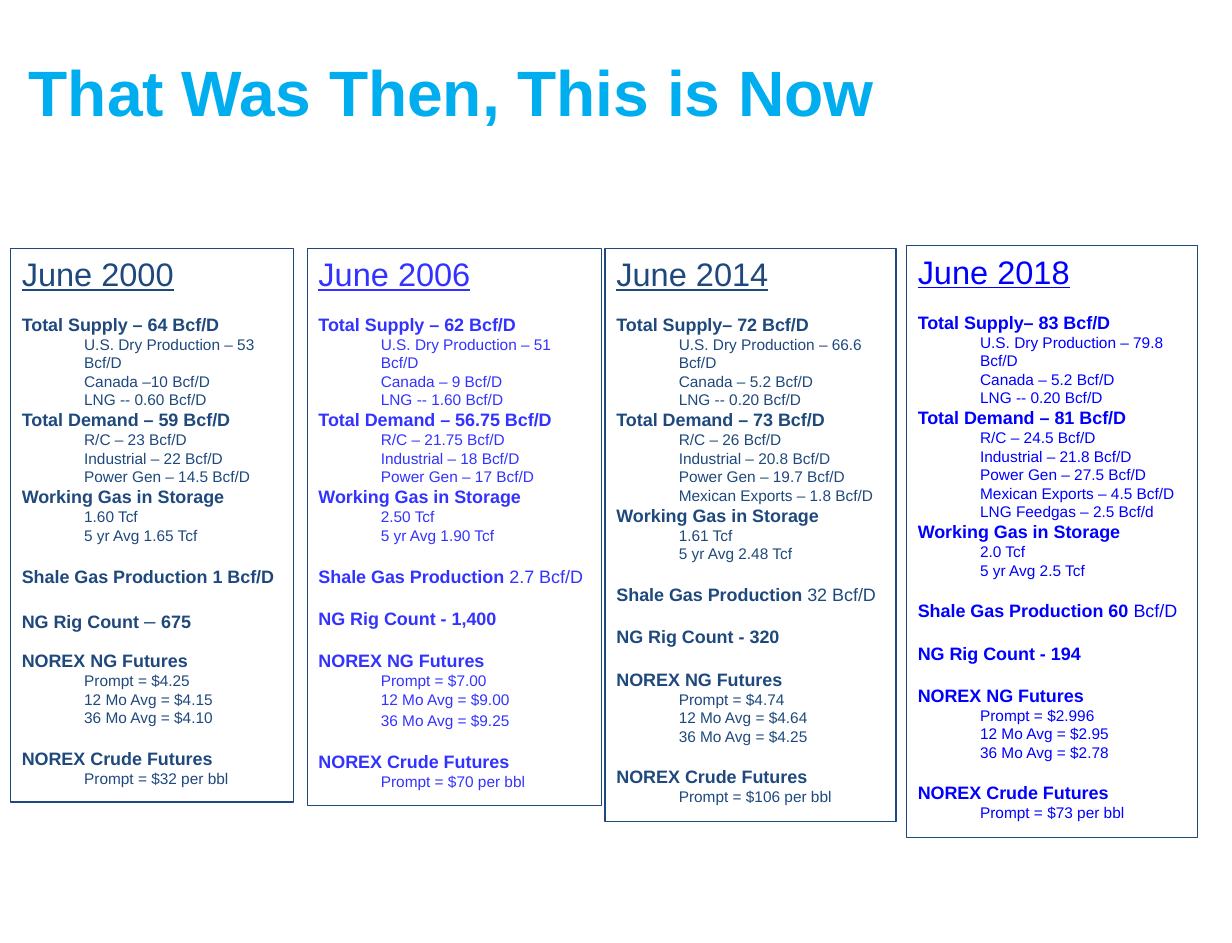
from dataclasses import dataclass

from pptx import Presentation
from pptx.dml.color import RGBColor
from pptx.enum.text import MSO_ANCHOR, MSO_AUTO_SIZE, PP_ALIGN
from pptx.util import Inches, Pt

FONT = "Arial"
SKY = RGBColor(0x00, 0xAE, 0xEF)
NAVY = RGBColor(0x1F, 0x49, 0x7D)
VIOLET = RGBColor(0x33, 0x33, 0xFF)
BLUE = RGBColor(0x00, 0x00, 0xFF)
HEADING_SIZE = 11.2
ITEM_SIZE = 9.6
DASH_SIZE = 12.8
GAP = 12.9


@dataclass
class Year:
    title: str
    color: RGBColor
    box: tuple
    supply: str
    production: str
    canada: str
    imports: str
    demand: str
    uses: tuple
    exports: tuple
    storage: tuple
    shale: str
    rigs: str
    gas_prices: tuple
    crude: str
    futures_gap: float = GAP


YEARS = [
    Year("June 2000", NAVY, (0.09, 2.15, 2.45, 4.8), " – 64", "53", "–10", "0.60",
         "59", ("23", "22", "14.5"), (), ("1.60", "1.65"), "1 Bcf/D", "|– |675",
         ("4.25", "4.15", "4.10"), "32", 11),
    Year("June 2006", VIOLET, (2.66, 2.15, 2.55, 4.83), " – 62", "51", "– 9", "1.60",
         "56.75", ("21.75", "18", "17"), (), ("2.50", "1.90"), "|2.7 Bcf/D", "- 1,400",
         ("7.00", "9.00", "9.25| "), "70"),
    Year("June 2014", NAVY, (5.24, 2.15, 2.52, 4.97), "– 72", "66.6", "– 5.2", "0.20",
         "73", ("26", "20.8", "19.7"), ("Mexican Exports – 1.8 Bcf/D",),
         ("1.61", "2.48"), "|32 Bcf/D", "- 320", ("4.74", "4.64", "4.25"), "106"),
    Year("June 2018", BLUE, (7.85, 2.13, 2.52, 5.13), "– 83", "79.8", "– 5.2", "0.20",
         "81", ("24.5", "21.8", "27.5"),
         ("Mexican Exports – 4.5 Bcf/D", "LNG Feedgas – 2.5 Bcf/d"),
         ("2.0", "2.5"), "60 |Bcf/D", "- 194", ("2.996", "2.95", "2.78"), "73"),
]


def sections(year):
    uses = [f"{name} – {value} Bcf/D"
            for name, value in zip(("R/C", "Industrial", "Power Gen"), year.uses)]
    prices = [f"{name} = ${value}"
              for name, value in zip(("Prompt", "12 Mo Avg", "36 Mo Avg"), year.gas_prices)]
    return [
        (GAP, f"Total Supply{year.supply} Bcf/D",
         [f"U.S. Dry Production – {year.production} Bcf/D",
          f"Canada {year.canada} Bcf/D", f"LNG -- {year.imports} Bcf/D"]),
        (0, f"Total Demand – {year.demand} Bcf/D", [*uses, *year.exports]),
        (0, "Working Gas in Storage",
         [f"{year.storage[0]} Tcf", f"5 yr Avg {year.storage[1]} Tcf"]),
        (GAP, f"Shale Gas Production {year.shale}", []),
        (GAP, f"NG Rig Count {year.rigs}", []),
        (year.futures_gap, "NOREX NG Futures", prices),
        (GAP, "NOREX Crude Futures", [f"Prompt = ${year.crude} per bbl"]),
    ]


def format_run(run, size, color, bold=False, underline=False):
    font = run.font
    font.name = FONT
    font.size = Pt(size)
    font.color.rgb = color
    font.bold = bold
    font.underline = underline


def add_heading(text_frame, text, color, gap):
    paragraph = text_frame.add_paragraph()
    paragraph.space_before = Pt(gap)
    for index, part in enumerate(text.split("|")):
        run = paragraph.add_run()
        run.text = part
        size = DASH_SIZE if part == "– " else HEADING_SIZE
        format_run(run, size, color, bold=index % 2 == 0)


def add_item(text_frame, text, color):
    paragraph = text_frame.add_paragraph()
    paragraph.level = 1
    properties = paragraph._p.get_or_add_pPr()
    properties.set("marL", str(Inches(0.54)))
    properties.set("indent", "0")
    for part, size in zip(text.split("|"), (ITEM_SIZE, HEADING_SIZE)):
        run = paragraph.add_run()
        run.text = part
        format_run(run, size, color)


def add_year(slide, year, box):
    shape = slide.shapes.add_textbox(*(Inches(length) for length in box))
    shape.name = year.title
    shape.line.color.rgb = NAVY
    shape.line.width = Pt(0.75)
    text_frame = shape.text_frame
    text_frame.word_wrap = True
    text_frame.auto_size = MSO_AUTO_SIZE.SHAPE_TO_FIT_TEXT
    text_frame.text = year.title
    format_run(text_frame.paragraphs[0].runs[0], 20.3, year.color, underline=True)
    for gap, heading, items in sections(year):
        add_heading(text_frame, heading, year.color, gap)
        for item in items:
            add_item(text_frame, item, year.color)


def add_title(slide, text, box):
    title = slide.shapes.title
    title.left, title.top, title.width, title.height = (Inches(length) for length in box)
    text_frame = title.text_frame
    text_frame.margin_left = text_frame.margin_right = 0
    text_frame.margin_top = text_frame.margin_bottom = 0
    text_frame.vertical_anchor = MSO_ANCHOR.MIDDLE
    text_frame.auto_size = MSO_AUTO_SIZE.NONE
    text_frame.text = text
    paragraph = text_frame.paragraphs[0]
    paragraph.alignment = PP_ALIGN.LEFT
    format_run(paragraph.runs[0], 40, SKY, bold=True)


def main():
    presentation = Presentation()
    presentation.slide_width = Inches(10.67)
    presentation.slide_height = Inches(8.17)
    slide = presentation.slides.add_slide(presentation.slide_layouts[5])
    add_title(slide, "That Was Then, This is Now", (0.25, 0.37, 9, 0.84))
    for year in YEARS:
        add_year(slide, year, year.box)
    presentation.save("out.pptx")


if __name__ == "__main__":
    main()
